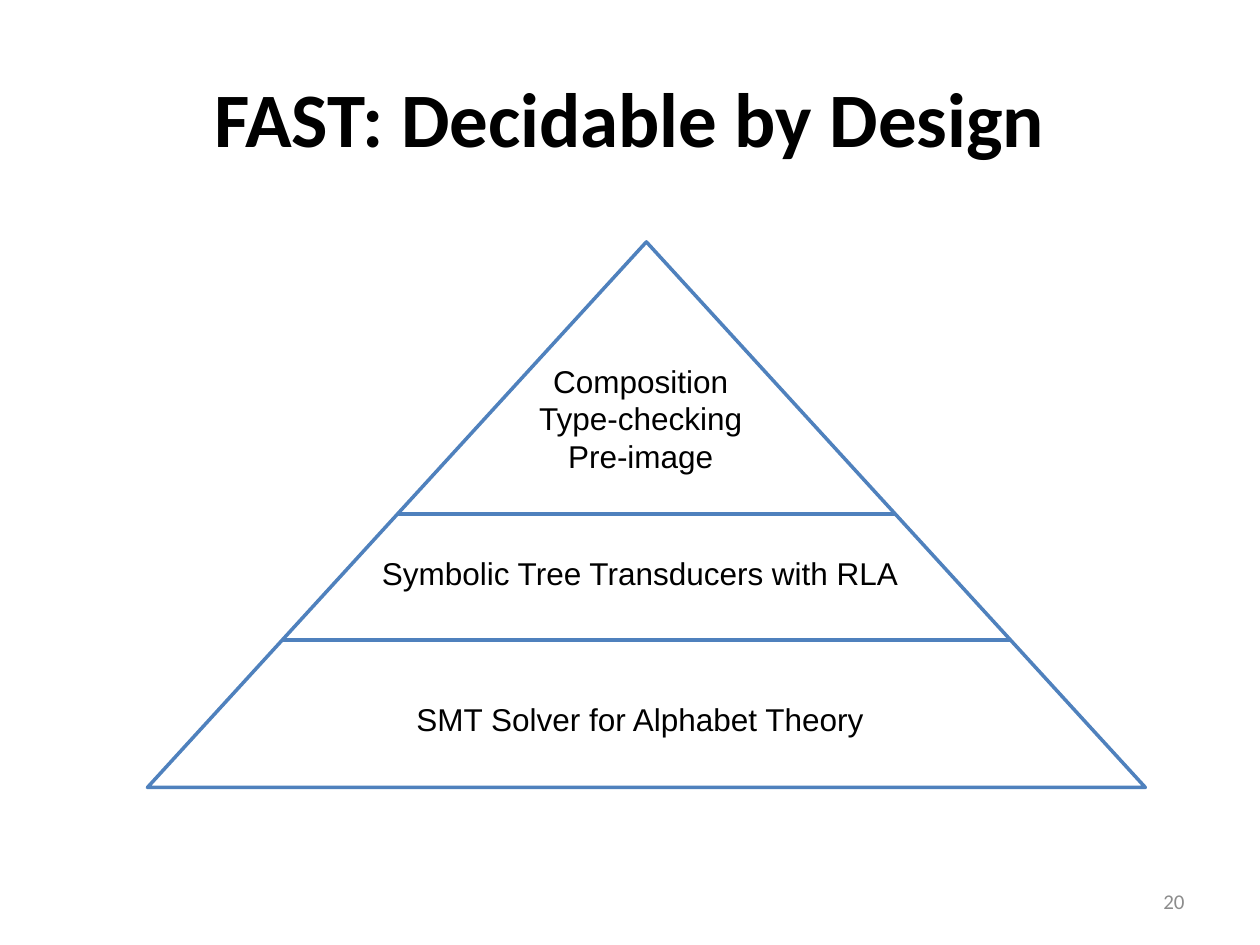
"""Build a slide with a three-tier pyramid of the FAST design."""
from lxml import etree
from pptx import Presentation
from pptx.dml.color import RGBColor
from pptx.enum.shapes import MSO_CONNECTOR, MSO_SHAPE
from pptx.enum.text import MSO_ANCHOR, PP_ALIGN
from pptx.oxml.ns import qn
from pptx.util import Inches, Pt

CENTER, RIGHT = PP_ALIGN.CENTER, PP_ALIGN.RIGHT
TOP, MIDDLE = MSO_ANCHOR.TOP, MSO_ANCHOR.MIDDLE
TRIANGLE, STRAIGHT = MSO_SHAPE.ISOSCELES_TRIANGLE, MSO_CONNECTOR.STRAIGHT

THEME = {
    "text": RGBColor(0x00, 0x00, 0x00),
    "muted": RGBColor(0x8C, 0x8C, 0x8C),
    "line": RGBColor(0x4F, 0x81, 0xBD),
    "fill": RGBColor(0xFF, 0xFF, 0xFF),
    "heading_font": "Calibri",
    "body_font": "Arial",
    "title_size": 44,
    "body_size": 18,
    "number_size": 12,
    "line_width": 2,
}

TITLE = "FAST: Decidable by Design"
TITLE_BOX = (0.5, 0.3, 9, 1.25)
NUMBER = "20"
NUMBER_BOX = (7.17, 6.95, 2.33, 0.4)
PYRAMID = (1.17, 1.92, 7.92, 4.33)
DIVIDERS = [4.08, 5.08]
TIERS = [
    (["Composition\nType-checking", "Pre-image"], (3.92, 2.82, 2.33, 1.01)),
    (["Symbolic Tree Transducers with RLA"], (2.58, 4.35, 5, 0.4)),
    (["SMT Solver for Alphabet Theory"], (2.58, 5.51, 5, 0.4)),
]


def inches(values):
    return [Inches(v) for v in values]


def write(tf, lines, font, size, color, align=CENTER, anchor=TOP, bold=False):
    tf.word_wrap = True
    tf.vertical_anchor = anchor
    for i, line in enumerate(lines):
        p = tf.add_paragraph() if i else tf.paragraphs[0]
        p.text = line
        p.alignment = align
        p.font.name = THEME[font]
        p.font.size = Pt(THEME[size])
        p.font.color.rgb = THEME[color]
        p.font.bold = bold


def style_line(line):
    line.color.rgb = THEME["line"]
    line.width = Pt(THEME["line_width"])


def add_text(s, box, lines, *style, **options):
    tf = s.shapes.add_textbox(*inches(box)).text_frame
    write(tf, lines, *style, **options)


def add_pyramid(s):
    sp = s.shapes.add_shape(TRIANGLE, *inches(PYRAMID))
    sp.shadow.inherit = False
    sp.fill.solid()
    sp.fill.fore_color.rgb = THEME["fill"]
    style_line(sp.line)


def add_divider(s, y):
    left, top, width, height = PYRAMID
    middle = left + width / 2
    half = width / 2 * (y - top) / height
    sp = s.shapes.add_connector(STRAIGHT, *inches((middle - half, y, middle + half, y)))
    style_line(sp.line)
    etree.SubElement(sp._element.spPr, qn("a:effectLst"))


def main():
    prs = Presentation()
    prs.slide_width, prs.slide_height = Inches(10), Inches(7.5)
    s = prs.slides.add_slide(prs.slide_layouts[5])

    title = s.shapes.title
    title.left, title.top, title.width, title.height = inches(TITLE_BOX)
    write(title.text_frame, [TITLE], "heading_font", "title_size", "text",
          anchor=MIDDLE, bold=True)
    add_text(s, NUMBER_BOX, [NUMBER], "heading_font", "number_size", "muted",
             align=RIGHT, anchor=MIDDLE)

    add_pyramid(s)
    for lines, box in TIERS:
        add_text(s, box, lines, "body_font", "body_size", "text")
    for y in DIVIDERS:
        add_divider(s, y)

    prs.save("out.pptx")


if __name__ == "__main__":
    main()
